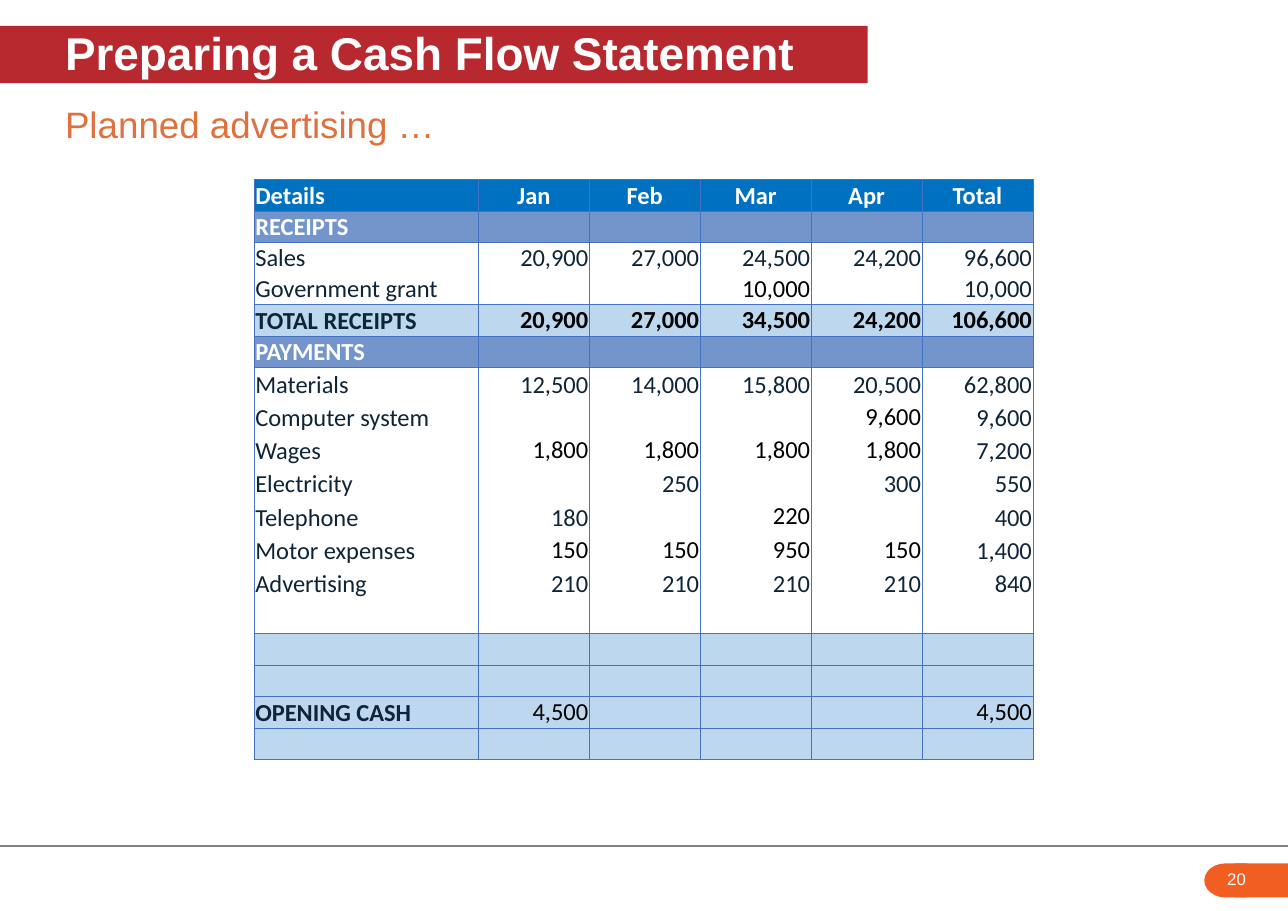
import pptx
import pptx.dml.color
import pptx.enum.shapes
import pptx.enum.text
import pptx.oxml
import pptx.oxml.ns
import pptx.util
from lxml import etree

Pt = pptx.util.Pt
RGBColor = pptx.dml.color.RGBColor
MSO_SHAPE = pptx.enum.shapes.MSO_SHAPE
ANCHOR = pptx.enum.text.MSO_ANCHOR
ALIGN = pptx.enum.text.PP_ALIGN
qn = pptx.oxml.ns.qn

WHITE = RGBColor(0xFF, 0xFF, 0xFF)
BLACK = RGBColor(0, 0, 0)
NAVY = RGBColor(0x0F, 0x25, 0x37)
RED = RGBColor(0xB8, 0x29, 0x2F)
RUST = RGBColor(0xDF, 0x71, 0x3E)
ORANGE = RGBColor(0xF2, 0x5E, 0x22)
GREY = RGBColor(0x80, 0x80, 0x80)
HEADER_BLUE = RGBColor(0x00, 0x70, 0xC0)
SECTION_BLUE = RGBColor(0x73, 0x95, 0xCB)
PALE_BLUE = RGBColor(0xBD, 0xD7, 0xEE)
BORDER_BLUE = RGBColor(0x44, 0x72, 0xC4)

SLIDE_W, SLIDE_H = 841.68, 595.44
TEXT_LEFT = 42.5
FONT_SIZE = 16
COLUMN_WIDTHS = [146.4] + [72.5] * 5

FILLS = {"header": HEADER_BLUE, "section": SECTION_BLUE, "receipt": WHITE,
         "payment": WHITE, "total": PALE_BLUE, "balance": PALE_BLUE}
HEIGHTS = {"receipt": 20.25, "payment": 21.75}
PLAIN_HEIGHT = 20.6

CASH_FLOW = [
    ("header", ["Details", "Jan", "Feb", "Mar", "Apr", "Total"]),
    ("section", ["RECEIPTS"]),
    ("receipt", ["Sales", "20,900", "27,000", "24,500", "24,200", "96,600"]),
    ("receipt", ["Government grant", "", "", "10,000", "", "10,000"]),
    ("total", ["TOTAL RECEIPTS", "20,900", "27,000", "34,500", "24,200", "106,600"]),
    ("section", ["PAYMENTS"]),
    ("payment", ["Materials", "12,500", "14,000", "15,800", "20,500", "62,800"]),
    ("payment", ["Computer system", "", "", "", "9,600", "9,600"]),
    ("payment", ["Wages", "1,800", "1,800", "1,800", "1,800", "7,200"]),
    ("payment", ["Electricity", "", "250", "", "300", "550"]),
    ("payment", ["Telephone", "180", "", "220", "", "400"]),
    ("payment", ["Motor expenses", "150", "150", "950", "150", "1,400"]),
    ("payment", ["Advertising", "210", "210", "210", "210", "840"]),
    ("payment", []),
    ("balance", []),
    ("balance", []),
    ("balance", ["OPENING CASH", "4,500", "", "", "", "4,500"]),
    ("balance", []),
]
# Columns set in black at the top of the cell
BLACK_COLUMNS = {"Government grant": {3}, "TOTAL RECEIPTS": {1, 2, 3, 4, 5},
                 "Computer system": {4}, "Wages": {1, 2, 3, 4}, "Telephone": {3},
                 "Motor expenses": {1, 2, 3, 4}, "OPENING CASH": {1, 5}}


def add_run(p, text, size, color, font="Arial", bold=False):
    r = p.add_run()
    r.text = text
    r.font.name, r.font.size, r.font.bold = font, Pt(size), bold
    r.font.color.rgb = color


def add_filled_shape(s, kind, x, y, w, h, color):
    sp = s.shapes.add_shape(kind, Pt(x), Pt(y), Pt(w), Pt(h))
    sp.shadow.inherit = False
    sp.fill.solid()
    sp.fill.fore_color.rgb = color
    sp.line.fill.background()
    return sp


def write_heading(sp, text, size, color, bold=False):
    tf = sp.text_frame
    tf.word_wrap = True
    tf.vertical_anchor = ANCHOR.MIDDLE
    tf.margin_left, tf.margin_right = Pt(TEXT_LEFT), 0
    tf.margin_top, tf.margin_bottom = 0, Pt(3.6)
    p = tf.paragraphs[0]
    p.alignment = ALIGN.LEFT
    add_run(p, text, size, color, bold=bold)


def add_footer(s, number):
    y = 553
    line = s.shapes.add_connector(pptx.enum.shapes.MSO_CONNECTOR.STRAIGHT,
                                  0, Pt(y), Pt(SLIDE_W), Pt(y))
    line.line.color.rgb = GREY
    line.line.width = Pt(0.75)
    etree.SubElement(line._element.spPr, qn("a:effectLst"))
    cap = add_filled_shape(s, MSO_SHAPE.FLOWCHART_DELAY, 787, 564.3, 28, 22.3, ORANGE)
    cap.rotation = 180
    add_filled_shape(s, MSO_SHAPE.RECTANGLE, 807, 564.3, SLIDE_W - 807, 22.3, ORANGE)
    tf = s.shapes.add_textbox(Pt(794.9), Pt(564.3), Pt(40.3), Pt(20.3)).text_frame
    tf.word_wrap = True
    add_run(tf.paragraphs[0], number, 11, WHITE)


def set_borders(cell, top, bottom):
    """Draw both sides, and the top and bottom edges only where asked."""
    tc_pr = cell._tc.get_or_add_tcPr()
    for tag, shown in (("a:lnL", True), ("a:lnR", True), ("a:lnT", top), ("a:lnB", bottom)):
        ln = etree.SubElement(tc_pr, qn(tag), w=str(Pt(0.5)))
        if shown:
            fill = etree.SubElement(ln, qn("a:solidFill"))
            etree.SubElement(fill, qn("a:srgbClr"), val=str(BORDER_BLUE))
        else:
            etree.SubElement(ln, qn("a:noFill"))


def write_cell(cell, kind, text, col, black):
    cell.margin_left = cell.margin_right = cell.margin_top = Pt(0.7)
    cell.margin_bottom = 0
    cell.vertical_anchor = ANCHOR.TOP if black else ANCHOR.MIDDLE
    p = cell.text_frame.paragraphs[0]
    if not text:
        etree.SubElement(p._p, qn("a:endParaRPr"), sz=str(FONT_SIZE * 100))
        return
    if col:
        p.alignment = ALIGN.CENTER if kind == "header" else ALIGN.RIGHT
    color = WHITE if kind in ("header", "section") else BLACK if black else NAVY
    bold = kind in ("header", "section", "total") or (kind == "balance" and col == 0)
    add_run(p, text, FONT_SIZE, color, "Calibri", bold)


def add_cash_flow_table(s):
    kinds = [kind for kind, _ in CASH_FLOW]
    heights = [HEIGHTS.get(kind, PLAIN_HEIGHT) for kind in kinds]
    table = s.shapes.add_table(len(kinds), len(COLUMN_WIDTHS), Pt(166.2), Pt(117.4),
                               Pt(sum(COLUMN_WIDTHS)), Pt(sum(heights))).table
    table.first_row = table.horz_banding = False
    for column, width in zip(table.columns, COLUMN_WIDTHS):
        column.width = Pt(width)
    for i, (kind, texts) in enumerate(CASH_FLOW):
        table.rows[i].height = Pt(heights[i])
        in_block = kind in HEIGHTS
        top = not (in_block and kinds[i - 1] == kind)
        bottom = not (in_block and kinds[i + 1] == kind)
        black_columns = BLACK_COLUMNS.get(texts[0], ()) if texts else ()
        for col in range(len(COLUMN_WIDTHS)):
            cell = table.cell(i, col)
            set_borders(cell, top, bottom)
            cell.fill.solid()
            cell.fill.fore_color.rgb = FILLS[kind]
            text = texts[col] if col < len(texts) else ""
            write_cell(cell, kind, text, col, col in black_columns)


def main():
    prs = pptx.Presentation()
    prs.slide_width, prs.slide_height = Pt(SLIDE_W), Pt(SLIDE_H)
    s = prs.slides.add_slide(prs.slide_layouts[6])
    add_footer(s, "20")
    banner = add_filled_shape(s, MSO_SHAPE.RECTANGLE, 0, 17, 567, 37.3, RED)
    write_heading(banner, "Preparing a Cash Flow Statement", 30, WHITE, bold=True)
    subtitle = s.shapes.add_textbox(0, Pt(64.3), Pt(SLIDE_W), Pt(36.7))
    write_heading(subtitle, "Planned advertising …", 24, RUST)
    add_cash_flow_table(s)
    prs.save("out.pptx")


if __name__ == "__main__":
    main()
